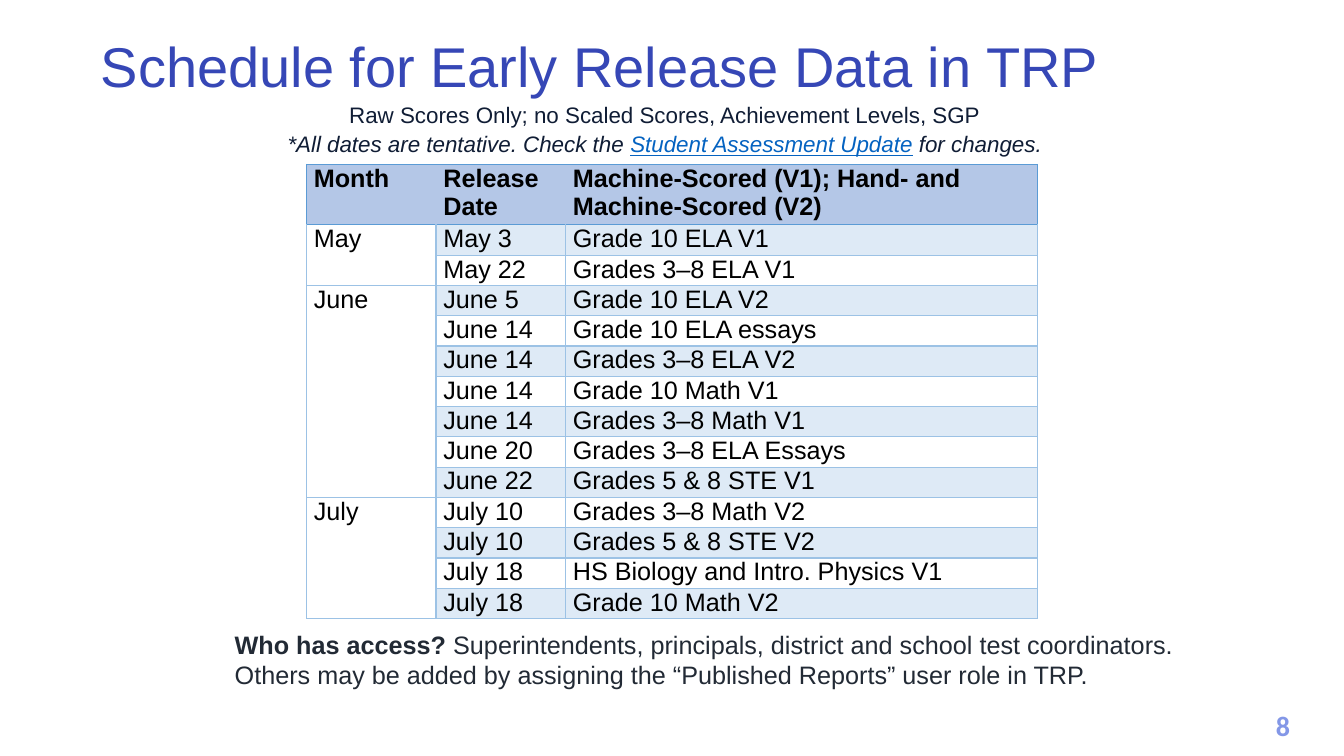
from dataclasses import dataclass
from typing import Optional

from lxml import etree
from pptx import Presentation
from pptx.dml.color import RGBColor
from pptx.enum import text as t
from pptx.oxml import ns
from pptx.util import Pt


@dataclass(frozen=True)
class Theme:
    font: str = "Arial"
    number_font: str = "Calibri"
    title: str = "3647B6"
    subtitle: str = "101D35"
    link: str = "0563C1"
    access: str = "222A35"
    number: str = "8397E7"
    cell_text: str = "000000"
    header_fill: str = "B4C7E7"
    header_line: str = "5B9BD5"
    line: str = "9CC2E5"
    band: str = "DEEAF6"
    plain: str = "FFFFFF"
    title_size: float = 40
    number_size: float = 20
    body_size: float = 18
    subtitle_size: float = 16


@dataclass(frozen=True)
class Box:
    left: float
    top: float
    width: float
    height: float

    def lengths(self) -> tuple:
        return Pt(self.left), Pt(self.top), Pt(self.width), Pt(self.height)


@dataclass(frozen=True)
class Release:
    date: str
    content: str


@dataclass(frozen=True)
class Month:
    name: str
    releases: tuple[Release, ...]


THEME = Theme()
HEADINGS = ("Month", "Release Date", "Machine-Scored (V1); Hand- and Machine-Scored (V2)")
COLUMN_WIDTHS = (92.5, 92.5, 337)
HEADER_HEIGHT, ROW_HEIGHT = 43.2, 21.6
SCHEDULE = (
    Month("May", (
        Release("May 3", "Grade 10 ELA V1"),
        Release("May 22", "Grades 3–8 ELA V1"),
    )),
    Month("June", (
        Release("June 5", "Grade 10 ELA V2"),
        Release("June 14", "Grade 10 ELA essays"),
        Release("June 14", "Grades 3–8 ELA V2"),
        Release("June 14", "Grade 10 Math V1"),
        Release("June 14", "Grades 3–8 Math V1"),
        Release("June 20", "Grades 3–8 ELA Essays"),
        Release("June 22", "Grades 5 & 8 STE V1"),
    )),
    Month("July", (
        Release("July 10", "Grades 3–8 Math V2"),
        Release("July 10", "Grades 5 & 8 STE V2"),
        Release("July 18", "HS Biology and Intro. Physics V1"),
        Release("July 18", "Grade 10 Math V2"),
    )),
)


def write(paragraph, text: str, *, size: float, color: str, font: str = THEME.font,
          bold: bool = False, italic: bool = False, underline: bool = False) -> None:
    run = paragraph.add_run()
    run.text = text
    run.font.name = font
    run.font.size = Pt(size)
    run.font.color.rgb = RGBColor.from_string(color)
    run.font.bold = bold
    run.font.italic = italic
    run.font.underline = underline


def add_text_box(slide, box: Box, align: t.PP_ALIGN = t.PP_ALIGN.LEFT):
    frame = slide.shapes.add_textbox(*box.lengths()).text_frame
    frame.word_wrap = True
    frame.paragraphs[0].alignment = align
    return frame.paragraphs[0]


def set_border(cell, side: str, color: Optional[str]) -> None:
    properties = cell._tc.get_or_add_tcPr()
    line = etree.SubElement(properties, ns.qn(f"a:ln{side}"), w=str(Pt(1)))
    if color is None:
        etree.SubElement(line, ns.qn("a:noFill"))
    else:
        fill = etree.SubElement(line, ns.qn("a:solidFill"))
        etree.SubElement(fill, ns.qn("a:srgbClr"), val=color)


def format_cell(cell, fill: str, borders: dict[str, Optional[str]]) -> None:
    for side, color in borders.items():
        set_border(cell, side, color)
    cell.fill.solid()
    cell.fill.fore_color.rgb = RGBColor.from_string(fill)
    cell.margin_left = cell.margin_right = Pt(5.2)
    cell.margin_top = cell.margin_bottom = Pt(0)


def write_cell(cell, text: str, bold: bool = False) -> None:
    write(cell.text_frame.paragraphs[0], text, size=THEME.body_size,
          color=THEME.cell_text, bold=bold)


def add_schedule(slide, left: float, top: float) -> None:
    row_count = sum(len(month.releases) for month in SCHEDULE)
    box = Box(left, top, sum(COLUMN_WIDTHS), HEADER_HEIGHT + ROW_HEIGHT * row_count)
    table = slide.shapes.add_table(row_count + 1, len(HEADINGS), *box.lengths()).table
    table.first_row = table.horz_banding = False
    for column, width in zip(table.columns, COLUMN_WIDTHS):
        column.width = Pt(width)
    for index, row in enumerate(table.rows):
        row.height = Pt(ROW_HEIGHT if index else HEADER_HEIGHT)

    last = len(HEADINGS) - 1
    for index, heading in enumerate(HEADINGS):
        cell = table.cell(0, index)
        edge = THEME.header_line
        format_cell(cell, THEME.header_fill, {
            "L": edge if index == 0 else None, "R": edge if index == last else None,
            "T": edge, "B": edge})
        write_cell(cell, heading, bold=True)

    for row in range(1, row_count + 1):
        top_line = THEME.header_line if row == 1 else THEME.line
        borders = {"L": THEME.line, "R": THEME.line, "T": top_line, "B": THEME.line}
        band = THEME.band if row % 2 else THEME.plain
        for column, fill in enumerate((THEME.plain, band, band)):
            format_cell(table.cell(row, column), fill, borders)

    first = 1
    for month in SCHEDULE:
        end = first + len(month.releases)
        table.cell(first, 0).merge(table.cell(end - 1, 0))
        write_cell(table.cell(first, 0), month.name)
        for row, release in enumerate(month.releases, first):
            write_cell(table.cell(row, 1), release.date)
            write_cell(table.cell(row, 2), release.content)
        first = end


def add_title(slide, box: Box, text: str) -> None:
    title = slide.shapes.title
    title.left, title.top, title.width, title.height = box.lengths()
    frame = title.text_frame
    frame.word_wrap = True
    frame.auto_size = t.MSO_AUTO_SIZE.NONE
    frame.vertical_anchor = t.MSO_ANCHOR.MIDDLE
    heading = frame.paragraphs[0]
    heading.alignment = t.PP_ALIGN.LEFT
    heading.line_spacing = 0.9
    write(heading, text, size=THEME.title_size, color=THEME.title)


def main() -> None:
    deck = Presentation()
    deck.slide_width, deck.slide_height = Pt(960), Pt(540)
    slide = deck.slides.add_slide(deck.slide_layouts.get_by_name("Title Only"))
    add_title(slide, Box(64.8, 23, 895, 53.3), "Schedule for Early Release Data in TRP")

    subtitle = add_text_box(slide, Box(190, 67.7, 569.5, 47.5), t.PP_ALIGN.CENTER)
    subtitle.line_spacing = 1.07
    subtitle.space_after = Pt(8)
    note = {"size": THEME.subtitle_size, "color": THEME.subtitle}
    write(subtitle, "Raw Scores Only; no Scaled Scores, Achievement Levels, SGP", **note)
    subtitle.add_line_break()
    write(subtitle, "*All dates are tentative. Check the ", italic=True, **note)
    write(subtitle, "Student Assessment Update", size=THEME.subtitle_size,
          color=THEME.link, italic=True, underline=True)
    write(subtitle, " for changes.", italic=True, **note)

    add_schedule(slide, 219, 117.4)

    access = add_text_box(slide, Box(160.6, 445.7, 703.4, 51))
    body = {"size": THEME.body_size, "color": THEME.access}
    write(access, "Who has access?", bold=True, **body)
    write(access, " Superintendents, principals, district and school test coordinators. "
          "Others may be added by assigning the “Published Reports” user role in TRP.", **body)

    number = add_text_box(slide, Box(894.2, 502.6, 44.6, 31.7), t.PP_ALIGN.CENTER)
    write(number, "8", size=THEME.number_size, color=THEME.number,
          font=THEME.number_font, bold=True)
    deck.save("out.pptx")


if __name__ == "__main__":
    main()
